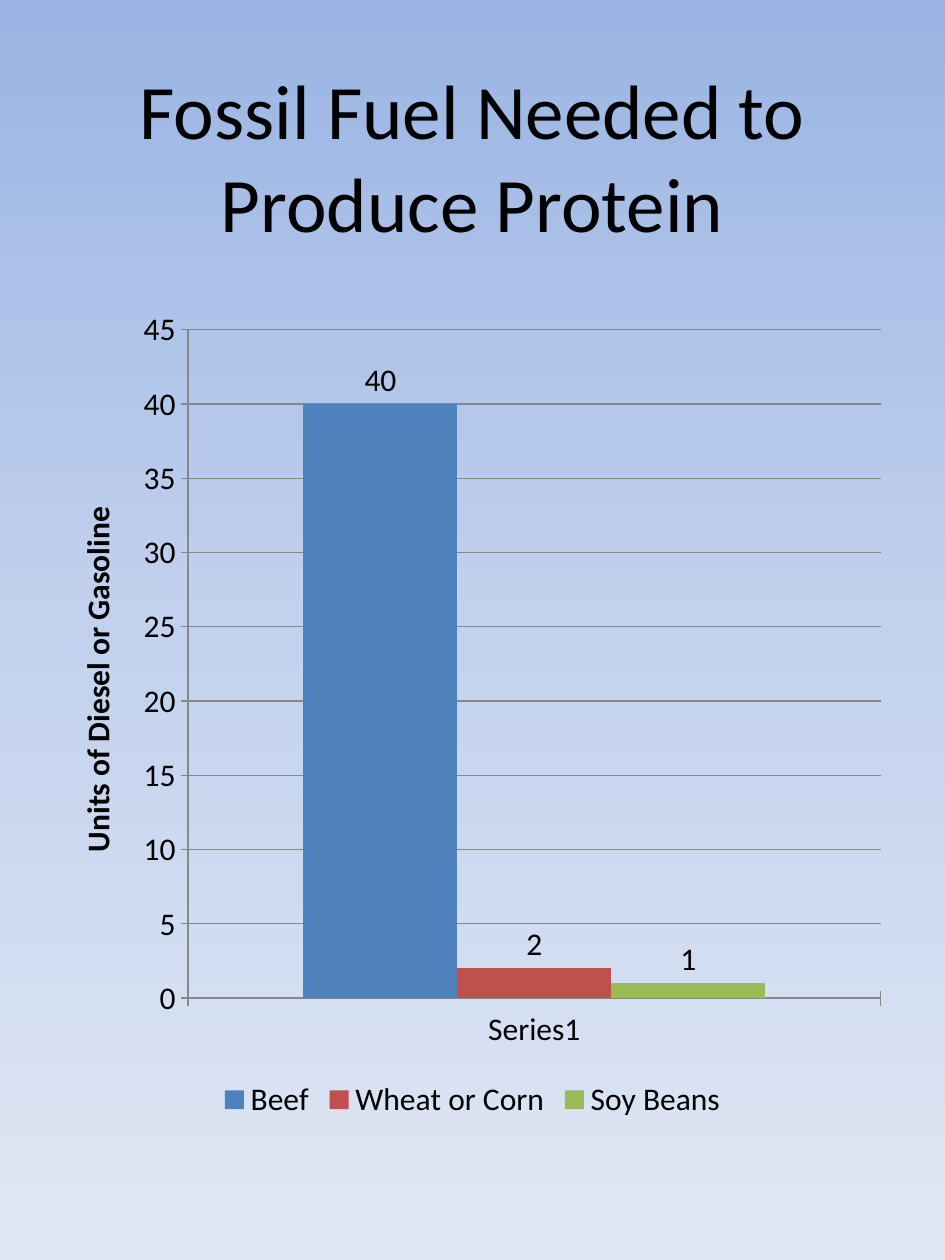
from copy import deepcopy

from pptx import Presentation
from pptx.chart.data import CategoryChartData as Data
from pptx.dml.color import RGBColor
from pptx.enum.chart import XL_CHART_TYPE as Kind
from pptx.enum.chart import XL_LABEL_POSITION as Spot
from pptx.enum.chart import XL_LEGEND_POSITION as Side
from pptx.enum.chart import XL_TICK_MARK as Tick
from pptx.enum.text import MSO_ANCHOR as Anchor
from pptx.enum.text import PP_ALIGN as Align
from pptx.oxml.ns import qn
from pptx.util import Pt

FONT = "Calibri"
GRAY = "878787"
SKY = [(0, "9AB5E4"), (0.5, "C2D1ED"), (1, "E1E8F5")]
FUELS = [("Beef", 40, "4F81BD"), ("Wheat or Corn", 2, "C0504D"), ("Soy Beans", 1, "9BBB59")]


def color(code):
    """Turn a hex string into a colour."""
    return RGBColor.from_string(code)


def style(font, size, bold=False):
    """Set the face, size, weight and colour of a font."""
    font.name, font.size, font.bold = FONT, Pt(size), bold
    font.color.rgb = color("000000")


def paint(slide):
    """Fill the background with the vertical sky gradient."""
    fill = slide.background.fill
    fill.gradient()
    fill.gradient_angle = 270
    stops = slide.element.find(".//" + qn("a:gsLst"))
    stops.insert(1, deepcopy(stops[0]))
    for stop, (pos, code) in zip(fill.gradient_stops, SKY):
        stop.position = pos
        stop.color.rgb = color(code)


def add_title(slide, text):
    """Place and format the title."""
    title = slide.shapes.title
    title.left, title.top, title.width, title.height = Pt(27), Pt(28.8), Pt(486), Pt(120)
    frame = title.text_frame
    frame.text = text
    frame.word_wrap = True
    frame.vertical_anchor = Anchor.MIDDLE
    line = frame.paragraphs[0]
    line.alignment = Align.CENTER
    style(line.runs[0].font, 44)


def format_axis(axis):
    """Give an axis crossing ticks and a gray line."""
    axis.major_tick_mark = Tick.CROSS
    axis.minor_tick_mark = Tick.NONE
    axis.format.line.color.rgb = color(GRAY)
    axis.format.line.width = Pt(0.75)


def format_bars(series, code):
    """Colour a series and show its value above the bar."""
    series.format.fill.solid()
    series.format.fill.fore_color.rgb = color(code)
    labels = series.data_labels
    labels.show_value = True
    labels.position = Spot.OUTSIDE_END
    style(labels.font, 18)


def add_chart(slide):
    """Add the column chart of fuel used by each food."""
    data = Data()
    data.categories = ["Series1"]
    for name, units, _ in FUELS:
        data.add_series(name, [units])
    box = Pt(27), Pt(168), Pt(486), Pt(475)
    chart = slide.shapes.add_chart(Kind.COLUMN_CLUSTERED, *box, data).chart
    style(chart.font, 18)
    chart.has_title = False
    chart.has_legend = True
    chart.legend.position = Side.BOTTOM
    chart.legend.include_in_layout = False
    plot = chart.plots[0]
    plot.gap_width, plot.overlap = 150, 0
    plot.vary_by_categories = False
    for series, (_, _, code) in zip(plot.series, FUELS):
        format_bars(series, code)
    format_axis(chart.category_axis)
    axis = chart.value_axis
    format_axis(axis)
    axis.minimum_scale, axis.maximum_scale, axis.major_unit = 0, 45, 5
    axis.has_major_gridlines = True
    grid = axis.major_gridlines.format.line
    grid.color.rgb = color(GRAY)
    grid.width = Pt(0.75)
    frame = axis.axis_title.text_frame
    frame.text = "Units of Diesel or Gasoline"
    style(frame.paragraphs[0].runs[0].font, 18, True)


def main():
    """Build and save the slide."""
    deck = Presentation()
    deck.slide_width, deck.slide_height = Pt(540), Pt(720)
    slide = deck.slides.add_slide(deck.slide_layouts[5])
    paint(slide)
    add_title(slide, "Fossil Fuel Needed to Produce Protein")
    add_chart(slide)
    deck.save("out.pptx")


if __name__ == "__main__":
    main()
